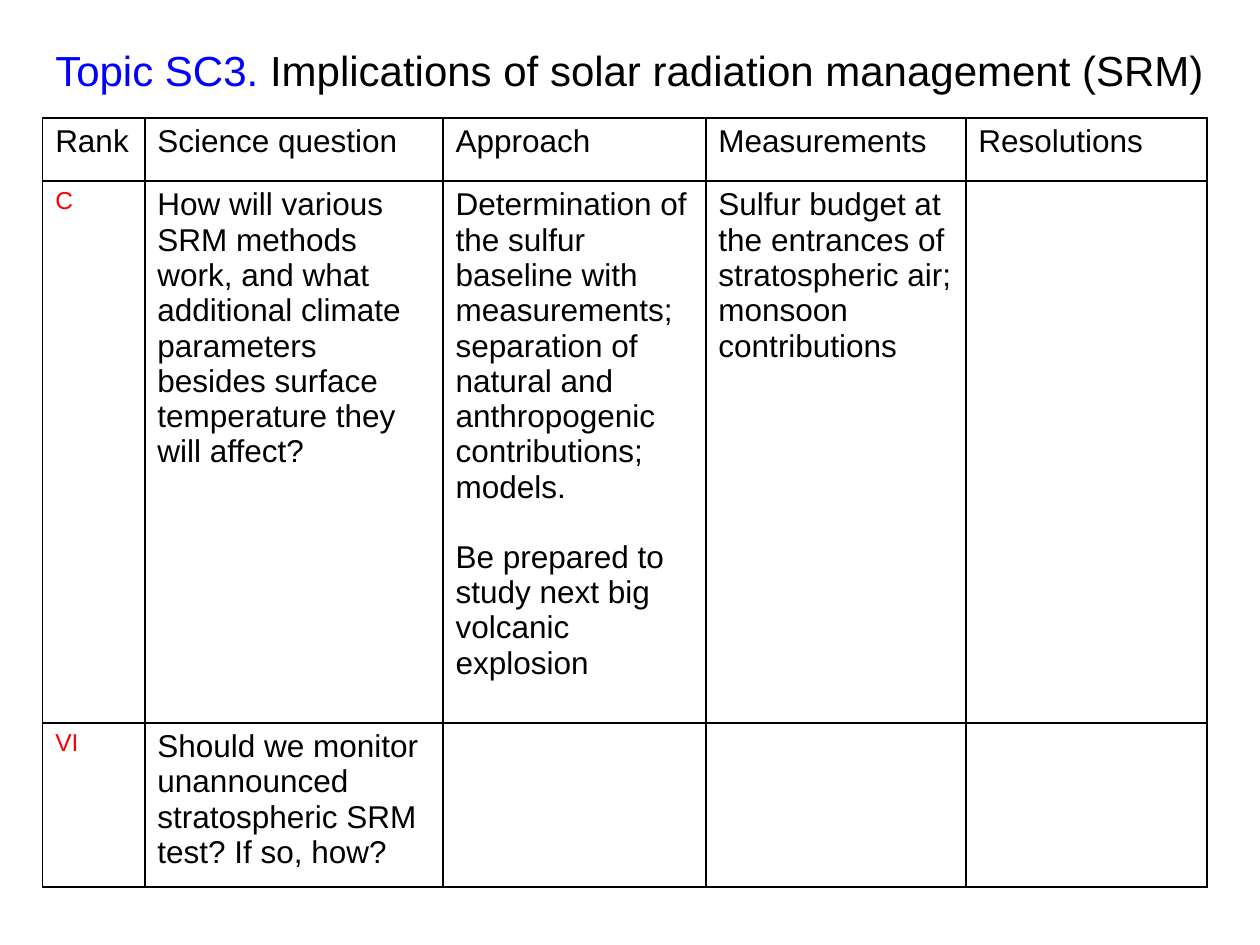
from pptx import Presentation
from pptx.dml.color import RGBColor
from pptx.enum.text import MSO_ANCHOR, PP_ALIGN
from pptx.oxml.ns import qn
from pptx.util import Cm, Pt
from lxml import etree

MIDDLE = MSO_ANCHOR.MIDDLE
LEFT = PP_ALIGN.LEFT

COLORS = {"text": "000000", "topic": "0000FF", "rank": "FF0000", "border": "000000"}
FONT = "Arial"
TITLE = [
    ("Topic SC3. ", "topic"),
    ("Implications of solar radiation management (SRM)", "text"),
]
HEADERS = ["Rank", "Science question", "Approach", "Measurements", "Resolutions"]
QUESTIONS = [
    [
        ["C"],
        ["How will various SRM methods work, and what additional climate "
         "parameters besides surface temperature they will affect?"],
        ["Determination of the sulfur baseline with measurements; separation of "
         "natural and anthropogenic contributions;",
         "models.",
         "Be prepared to study next big volcanic explosion"],
        ["Sulfur budget at the entrances of stratospheric air; monsoon contributions"],
        [],
    ],
    [
        ["VI"],
        ["Should we monitor unannounced stratospheric SRM test? If so, how?"],
        [], [], [],
    ],
]
ROWS = [[[header] for header in HEADERS]] + QUESTIONS
COLUMN_WIDTHS = [2.06, 6.01, 5.3, 5.24, 4.86]
ROW_HEIGHTS = [1.27, 10.92, 3.31]
LEFT_EDGE = 0.86
TABLE_TOP = 2.38
SECTION_GAP = {"Be prepared to study next big volcanic explosion": 20}


def add_text(paragraph, text, size=18, color="text", space_before=0):
    paragraph.alignment = LEFT
    if space_before:
        paragraph.space_before = Pt(space_before)
    run = paragraph.add_run()
    run.text = text
    run.font.name = FONT
    run.font.size = Pt(size)
    run.font.color.rgb = RGBColor.from_string(COLORS[color])


def add_borders(cell):
    properties = cell._tc.get_or_add_tcPr()
    for side in ("a:lnL", "a:lnR", "a:lnT", "a:lnB"):
        line = etree.SubElement(properties, qn(side), w=str(Pt(1)))
        fill = etree.SubElement(line, qn("a:solidFill"))
        etree.SubElement(fill, qn("a:srgbClr"), val=COLORS["border"])


def add_title(slide):
    title = slide.shapes.title
    title.left, title.top = Cm(LEFT_EDGE), Cm(0.76)
    title.width, title.height = Cm(23.9), Cm(1.27)
    title.text_frame.word_wrap = True
    title.text_frame.vertical_anchor = MIDDLE
    for text, color in TITLE:
        add_text(title.text_frame.paragraphs[0], text, size=24, color=color)


def add_question_table(slide):
    table = slide.shapes.add_table(
        len(ROWS), len(HEADERS), Cm(LEFT_EDGE), Cm(TABLE_TOP),
        Cm(sum(COLUMN_WIDTHS)), Cm(sum(ROW_HEIGHTS)),
    ).table
    table.first_row = table.horz_banding = False
    for column, width in zip(table.columns, COLUMN_WIDTHS):
        column.width = Cm(width)
    for row, height in zip(table.rows, ROW_HEIGHTS):
        row.height = Cm(height)
    for row_index, row in enumerate(ROWS):
        for column_index, texts in enumerate(row):
            cell = table.cell(row_index, column_index)
            add_borders(cell)
            cell.fill.background()
            is_rank = row_index > 0 and column_index == 0
            style = {"size": 14, "color": "rank"} if is_rank else {}
            frame = cell.text_frame
            for index, text in enumerate(texts):
                paragraph = frame.add_paragraph() if index else frame.paragraphs[0]
                add_text(paragraph, text, space_before=SECTION_GAP.get(text, 0), **style)


def main():
    presentation = Presentation()
    presentation.slide_width, presentation.slide_height = Cm(25.4), Cm(19.05)
    slide = presentation.slides.add_slide(presentation.slide_layouts[5])
    add_title(slide)
    add_question_table(slide)
    presentation.save("out.pptx")


if __name__ == "__main__":
    main()
